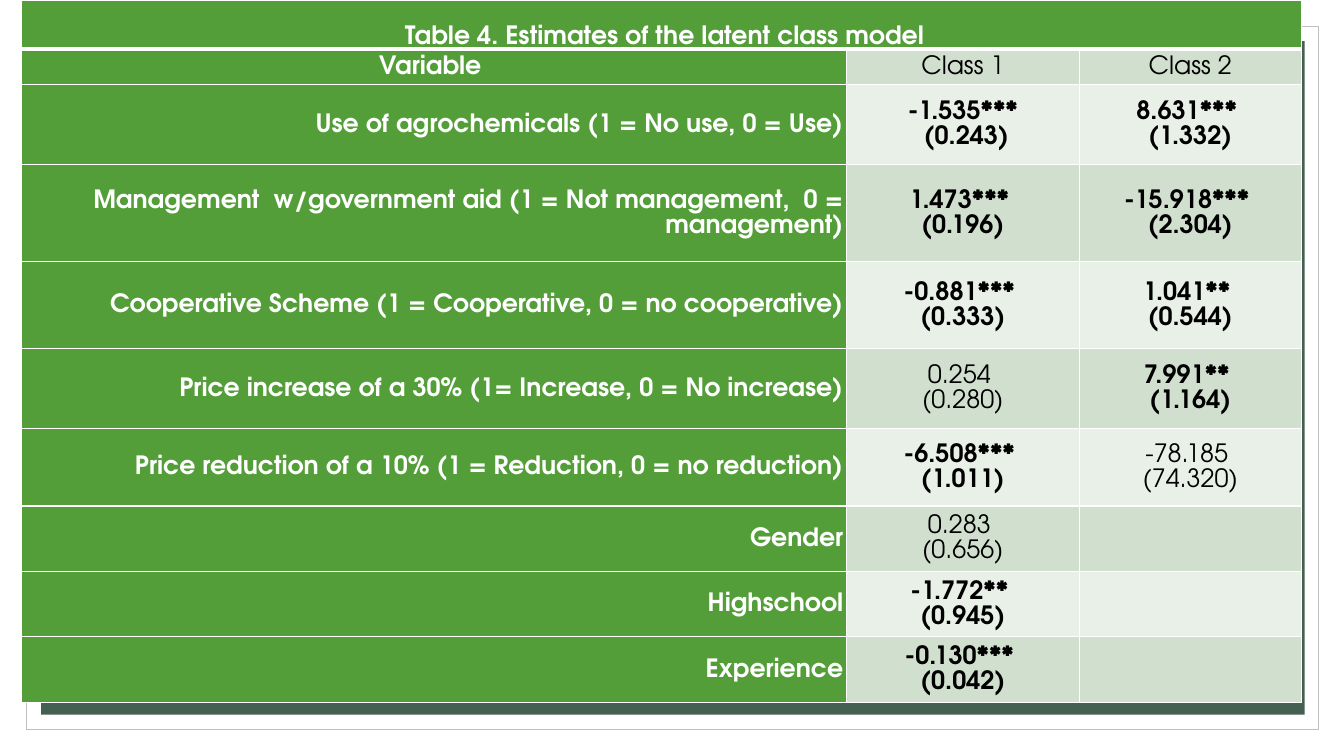
from lxml import etree
from pptx import Presentation
from pptx.dml.color import RGBColor
from pptx.enum.shapes import MSO_SHAPE
from pptx.enum.text import MSO_ANCHOR, PP_ALIGN
from pptx.oxml.ns import qn
from pptx.util import Cm, Pt

RECT = MSO_SHAPE.RECTANGLE
MID, LOW = MSO_ANCHOR.MIDDLE, MSO_ANCHOR.BOTTOM
MITTE, RIGHT = PP_ALIGN.CENTER, PP_ALIGN.RIGHT

HUES = {
    "white": "FFFFFF", "black": "000000", "edge": "BFBFBF", "dark": "455F51",
    "green": "549E39", "band": "D1DFCE", "pale": "E9F0E8",
}
INSET = {"margin_left": Cm(0.08), "margin_right": Cm(0.08),
         "margin_top": 0, "margin_bottom": 0}
TYPE = {"name": "TeX Gyre Adventor", "size": Pt(18)}

ROWS = [
    (1.24, " Table 4. Estimates of the latent class model", "", ""),
    (0.89, "Variable ", "Class 1", "Class 2"),
    (2.01, "Use of agrochemicals (1 = No use, 0 = Use)",
     "-1.535***\n (0.243)", "8.631*** \n(1.332)"),
    (2.46, "Management  w/government aid (1 = Not management,  0 = management)",
     "1.473*** \n(0.196)", "-15.918*** \n(2.304)"),
    (2.18, "Cooperative Scheme (1 = Cooperative, 0 = no cooperative)",
     "-0.881*** \n(0.333)", "1.041** \n(0.544)"),
    (2.01, "Price increase of a 30% (1= Increase, 0 = No increase)",
     "0.254 \n(0.280)", "7.991** \n(1.164)"),
    (1.96, "Price reduction of a 10% (1 = Reduction, 0 = no reduction)",
     "-6.508*** \n(1.011)", "-78.185 \n(74.320)"),
    (1.65, "Gender", "0.283 \n(0.656)", ""),
    (1.65, "Highschool", "-1.772** \n(0.945)", ""),
    (1.65, "Experience", "-0.130*** \n(0.042)", ""),
]
COLS = [20.8, 5.87, 5.59]
THICK = {(0, "lnB"), (1, "lnT")}


def hue(key):
    return RGBColor.from_string(HUES[key])


def rule(cell, side, width):
    line = etree.SubElement(cell._tc.get_or_add_tcPr(), qn("a:" + side), w=str(Pt(width)))
    fill = etree.SubElement(line, qn("a:solidFill"))
    etree.SubElement(fill, qn("a:srgbClr"), val=HUES["white"])


deck = Presentation()
deck.slide_width, deck.slide_height = Cm(33.87), Cm(19.05)
slide = deck.slides.add_slide(deck.slide_layouts[6])

for box, fill, edge in [
    ((0.66, 0.66, 32.56, 17.73), "white", "edge"),
    ((1.04, 1.04, 32.84 - 1.0 + 0.0, 16.97), "dark", None),
]:
    panel = slide.shapes.add_shape(RECT, *map(Cm, box))
    panel.shadow.inherit = False
    panel.fill.solid()
    panel.fill.fore_color.rgb = hue(fill)
    if edge:
        panel.line.color.rgb = hue(edge)
        panel.line.width = Pt(0.5)
    else:
        panel.line.fill.background()

high = sum(row[0] for row in ROWS)
frame = slide.shapes.add_table(
    len(ROWS), len(COLS), Cm(0.53), 0, Cm(sum(COLS)), Cm(high))
table = frame.table
for col, width in zip(table.columns, COLS):
    col.width = Cm(width)

for r, (tall, *texts) in enumerate(ROWS):
    table.rows[r].height = Cm(tall)
    for c, text in enumerate(texts):
        cell = table.cell(r, c)
        label = r == 0 or c == 0
        for side in ("lnL", "lnR", "lnT", "lnB"):
            rule(cell, side, 3 if (r, side) in THICK else 1)
        cell.fill.solid()
        cell.fill.fore_color.rgb = hue("green" if label else ("pale", "band")[r % 2])
        cell.vertical_anchor = LOW if r == 0 else MID
        for key, value in INSET.items():
            setattr(cell, key, value)
        cell.text = text
        for para in cell.text_frame.paragraphs:
            para.alignment = RIGHT if c == 0 and r > 1 else MITTE
            para.line_spacing = 1.07
            for part in para.runs:
                for key, value in TYPE.items():
                    setattr(part.font, key, value)
                part.font.bold = label or "*" in text
                part.font.color.rgb = hue("white" if label else "black")

table.cell(0, 0).merge(table.cell(0, 2))
deck.save("out.pptx")
